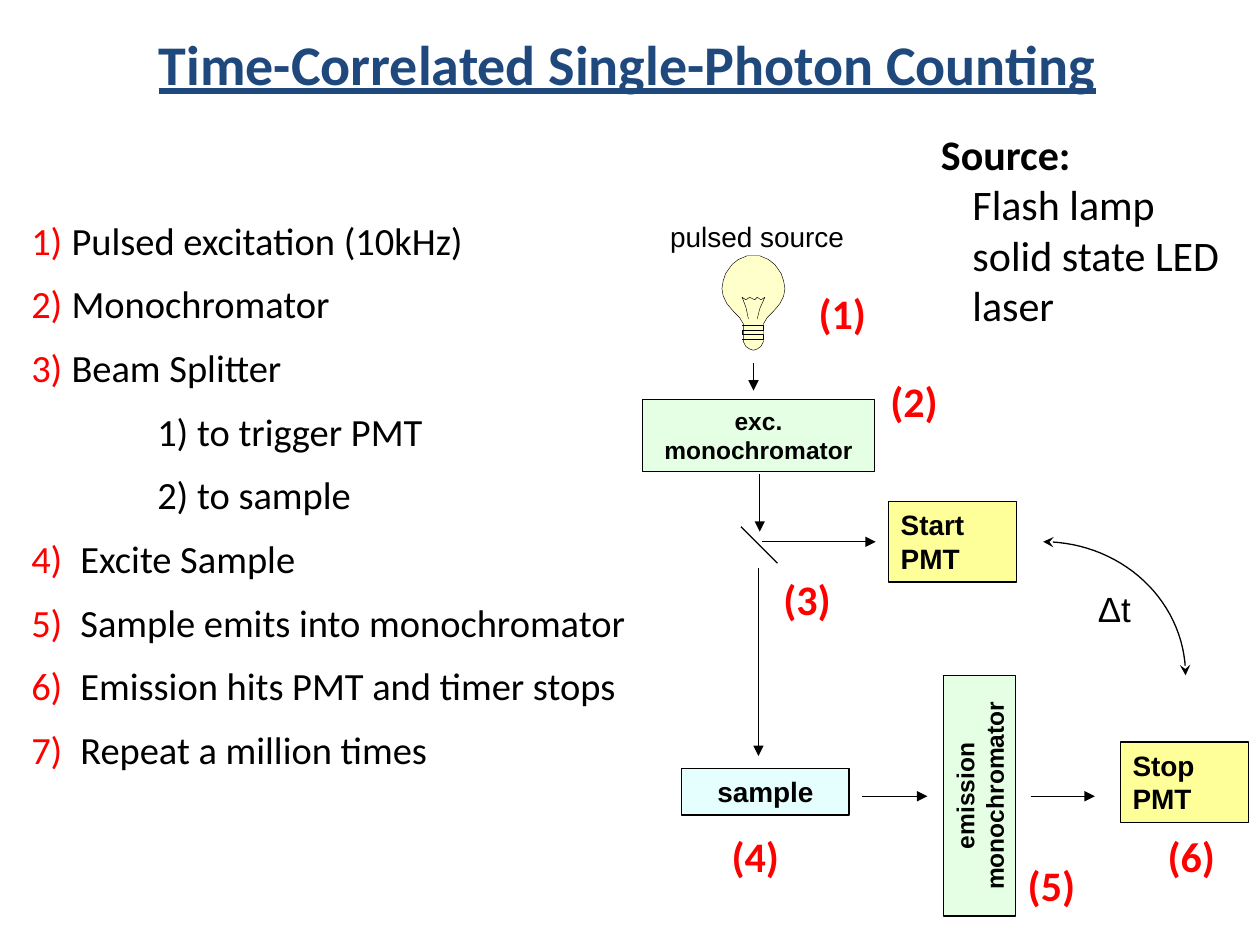
import math
from typing import NamedTuple

import pptx
import pptx.dml.color
import pptx.enum.dml
import pptx.enum.shapes
import pptx.enum.text
import pptx.oxml.ns
import pptx.oxml.xmlchemy
import pptx.util
from lxml import etree
from pptx.util import Inches

ALIGN = pptx.enum.text.PP_ALIGN
ANCHOR = pptx.enum.text.MSO_ANCHOR
FIT = pptx.enum.text.MSO_AUTO_SIZE
BLACK, RED, YELLOW, GREEN, CYAN = "000000", "FF0000", "FFFF99", "CCFFCC", "CCFFFF"


class Box(NamedTuple):
    text: str
    left: float
    top: float
    width: float
    height: float
    fill: str
    size: int = 16
    align: ALIGN = ALIGN.CENTER
    alpha: int = 50
    rotation: int = 0


class Beam(NamedTuple):
    start: tuple
    end: tuple
    tail: str = "triangle"


class Marker(NamedTuple):
    text: str
    left: float
    top: float


class Step(NamedTuple):
    number: str
    text: str
    margin: float


BOXES = [
    Box("Start PMT", 7.05, 3.98, 1.02, 0.64, YELLOW, align=ALIGN.LEFT, alpha=100),
    Box("Stop PMT", 8.89, 5.89, 1.02, 0.64, YELLOW, align=ALIGN.LEFT, alpha=100),
    Box("sample", 5.41, 6.1, 1.33, 0.37, CYAN),
    Box("exc. monochromator", 5.1, 3.17, 1.84, 0.57, GREEN, size=14),
    Box("emission monochromator", 6.82, 6.03, 1.91, 0.57, GREEN, size=14, rotation=270),
]
BEAMS = [
    Beam((5.98, 2.88), (5.98, 3.1)),
    Beam((6.03, 3.76), (6.03, 4.22)),
    Beam((6.05, 4.3), (6.95, 4.3)),
    Beam((6.02, 4.51), (6.02, 6)),
    Beam((6.84, 6.32), (7.36, 6.32)),
    Beam((8.18, 6.32), (8.69, 6.32)),
    Beam((5.88, 4.18), (6.17, 4.47), tail=""),
]
MARKERS = [
    Marker("(1)", 6.37, 2.23),
    Marker("(2)", 6.94, 2.93),
    Marker("(3)", 6.09, 4.5),
    Marker("(4)", 5.68, 6.54),
    Marker("(5)", 8.03, 6.77),
    Marker("(6)", 9.14, 6.54),
]
STEPS = [
    Step("1)", "Pulsed excitation (10kHz)", 0.32),
    Step("2)", "Monochromator", 0.32),
    Step("3)", "Beam Splitter", 0.32),
    Step("", "1) to trigger PMT", 1),
    Step("", "2) to sample", 1),
    Step("4)", "Excite Sample", 0.39),
    Step("5)", "Sample emits into monochromator", 0.39),
    Step("6)", "Emission hits PMT and timer stops", 0.39),
    Step("7)", "Repeat a million times", 0.39),
]
BULB_AXIS = 5.98
BULB_PROFILE = [
    (0, 2.03), (0.05, 2.03), (0.12, 2.06), (0.17, 2.1), (0.22, 2.17),
    (0.24, 2.23), (0.25, 2.29), (0.24, 2.35), (0.21, 2.41), (0.16, 2.47),
    (0.11, 2.52), (0.08, 2.57), (0.08, 2.71), (0.06, 2.75), (0.03, 2.77), (0, 2.78),
]
FILAMENT = [
    (5.94, 2.53), (5.92, 2.44), (5.89, 2.36), (5.92, 2.38), (5.95, 2.36), (5.99, 2.38),
    (6.01, 2.36), (6.04, 2.38), (6.07, 2.36), (6.03, 2.45), (6.01, 2.53),
]
SCREW_THREAD = [
    (5.89, 2.58), (6.06, 2.58), (6.06, 2.62), (5.89, 2.62),
    (5.89, 2.65), (6.06, 2.65), (6.06, 2.69), (5.89, 2.69),
]


def color(hex_value: str) -> pptx.dml.color.RGBColor:
    return pptx.dml.color.RGBColor.from_string(hex_value)


def add_xml(parent, tag: str, **attributes: str):
    return etree.SubElement(parent, pptx.oxml.ns.qn(tag), **attributes)


def format_run(run, size: int, font: str = "Calibri", tint: str = BLACK, bold: bool = False) -> None:
    run.font.size = pptx.util.Pt(size)
    run.font.name = font
    run.font.bold = bold
    run.font.color.rgb = color(tint)


def set_line(shape, width: float = 0.75, head: str = "", tail: str = "") -> None:
    shape.line.color.rgb = color(BLACK)
    shape.line.width = pptx.util.Pt(width)
    outline = shape._element.spPr.find(pptx.oxml.ns.qn("a:ln"))
    for tag, arrow in (("a:headEnd", head), ("a:tailEnd", tail)):
        if arrow:
            add_xml(outline, tag, type=arrow)


def add_label(slide, text: str, left: float, top: float, width: float, height: float, wrap: bool = True):
    label = slide.shapes.add_textbox(Inches(left), Inches(top), Inches(width), Inches(height))
    label.text_frame.word_wrap = wrap
    label.text_frame.auto_size = FIT.SHAPE_TO_FIT_TEXT
    label.text_frame.text = text
    return label.text_frame


def add_box(slide, box: Box) -> None:
    part = slide.shapes.add_shape(
        pptx.enum.shapes.MSO_SHAPE.RECTANGLE,
        Inches(box.left), Inches(box.top), Inches(box.width), Inches(box.height),
    )
    part.shadow.inherit = False
    part.rotation = box.rotation
    part.fill.solid()
    part.fill.fore_color.rgb = color(box.fill)
    if box.alpha < 100:
        tint = part._element.spPr.find(".//" + pptx.oxml.ns.qn("a:srgbClr"))
        add_xml(tint, "a:alpha", val=str(box.alpha * 1000))
    set_line(part)
    frame = part.text_frame
    frame.word_wrap = True
    frame.auto_size = FIT.SHAPE_TO_FIT_TEXT
    frame.vertical_anchor = ANCHOR.TOP
    frame.text = box.text
    frame.paragraphs[0].alignment = box.align
    format_run(frame.paragraphs[0].runs[0], box.size, "Arial", bold=True)


def add_beam(slide, beam: Beam) -> None:
    points = [Inches(value) for value in beam.start + beam.end]
    line = slide.shapes.add_connector(pptx.enum.shapes.MSO_CONNECTOR.STRAIGHT, *points)
    set_line(line, tail=beam.tail)
    add_xml(line._element.spPr, "a:effectLst")


def add_outline(slide, points: list, fill: str = "", width: float = 0.25, arrow: str = ""):
    vertices = [(Inches(x), Inches(y)) for x, y in points]
    builder = slide.shapes.build_freeform(*vertices[0])
    builder.add_line_segments(vertices[1:], close=bool(fill))
    outline = builder.convert_to_shape()
    outline.shadow.inherit = False
    if fill:
        outline.fill.solid()
        outline.fill.fore_color.rgb = color(fill)
    else:
        outline.fill.background()
    set_line(outline, width, arrow, arrow)
    return outline


def add_steps(slide) -> None:
    frame = add_label(slide, "", 0.15, 1.67, 5.19, 4.56)
    for index, step in enumerate(STEPS):
        paragraph = frame.paragraphs[0] if index == 0 else frame.add_paragraph()
        paragraph.space_after = pptx.util.Pt(10)
        properties = paragraph._p.get_or_add_pPr()
        properties.set("marL", str(Inches(step.margin)))
        properties.set("indent", str(-Inches(step.margin) if step.number else 0))
        parts = [(step.number + "\t", RED)] if step.number else []
        for text, tint in parts + [(step.text, BLACK)]:
            run = paragraph.add_run()
            run.text = text
            format_run(run, 22, tint=tint)


def add_timing_arc(slide) -> None:
    angles = [math.radians(90 * step / 30) for step in range(31)]
    arc = [(8.28 + 1.13 * math.sin(a), 5.36 - 1.06 * math.cos(a)) for a in angles]
    delay = add_outline(slide, arc, width=0.75, arrow="stealth").text_frame
    delay.word_wrap = False
    delay.vertical_anchor = ANCHOR.MIDDLE
    delay.text = "Δt"
    delay.paragraphs[0].alignment = ALIGN.CENTER
    format_run(delay.paragraphs[0].runs[0], 20, "Arial")


def main() -> None:
    deck = pptx.Presentation()
    deck.slide_width, deck.slide_height = Inches(10), Inches(7.5)
    slide = deck.slides.add_slide(deck.slide_layouts[5])

    title = slide.shapes.title
    title.left, title.top, title.width, title.height = (Inches(v) for v in (0.48, 0, 9, 1))
    title.text_frame.text = "Time-Correlated Single-Photon Counting"
    heading = title.text_frame.paragraphs[0].runs[0]
    format_run(heading, 32, tint="1F497D", bold=True)
    heading.font.underline = True

    sources = add_label(slide, "Source:\nFlash lamp\nsolid state LED\nlaser", 7.37, 0.97, 2.5, 1.72, wrap=False)
    for index, paragraph in enumerate(sources.paragraphs):
        format_run(paragraph.runs[0], 24, bold=index == 0)
        if index:
            paragraph._p.get_or_add_pPr().set("marL", str(Inches(0.25)))

    for box in BOXES:
        add_box(slide, box)
    for beam in BEAMS:
        add_beam(slide, beam)
    lamp = add_label(slide, "pulsed source", 5.22, 1.69, 1.6, 0.37, wrap=False)
    format_run(lamp.paragraphs[0].runs[0], 16, "Arial")
    add_timing_arc(slide)
    add_steps(slide)
    for marker in MARKERS:
        number = add_label(slide, marker.text, marker.left, marker.top, 0.63, 0.5).paragraphs[0]
        number.alignment = ALIGN.CENTER
        format_run(number.runs[0], 24, tint=RED, bold=True)

    right = [(BULB_AXIS + x, y) for x, y in BULB_PROFILE]
    left = [(BULB_AXIS - x, y) for x, y in BULB_PROFILE[-2:0:-1]]
    add_outline(slide, right + left, fill="FFFFCC")
    for wire in (FILAMENT, SCREW_THREAD):
        add_outline(slide, wire)
    deck.save("out.pptx")


if __name__ == "__main__":
    main()
